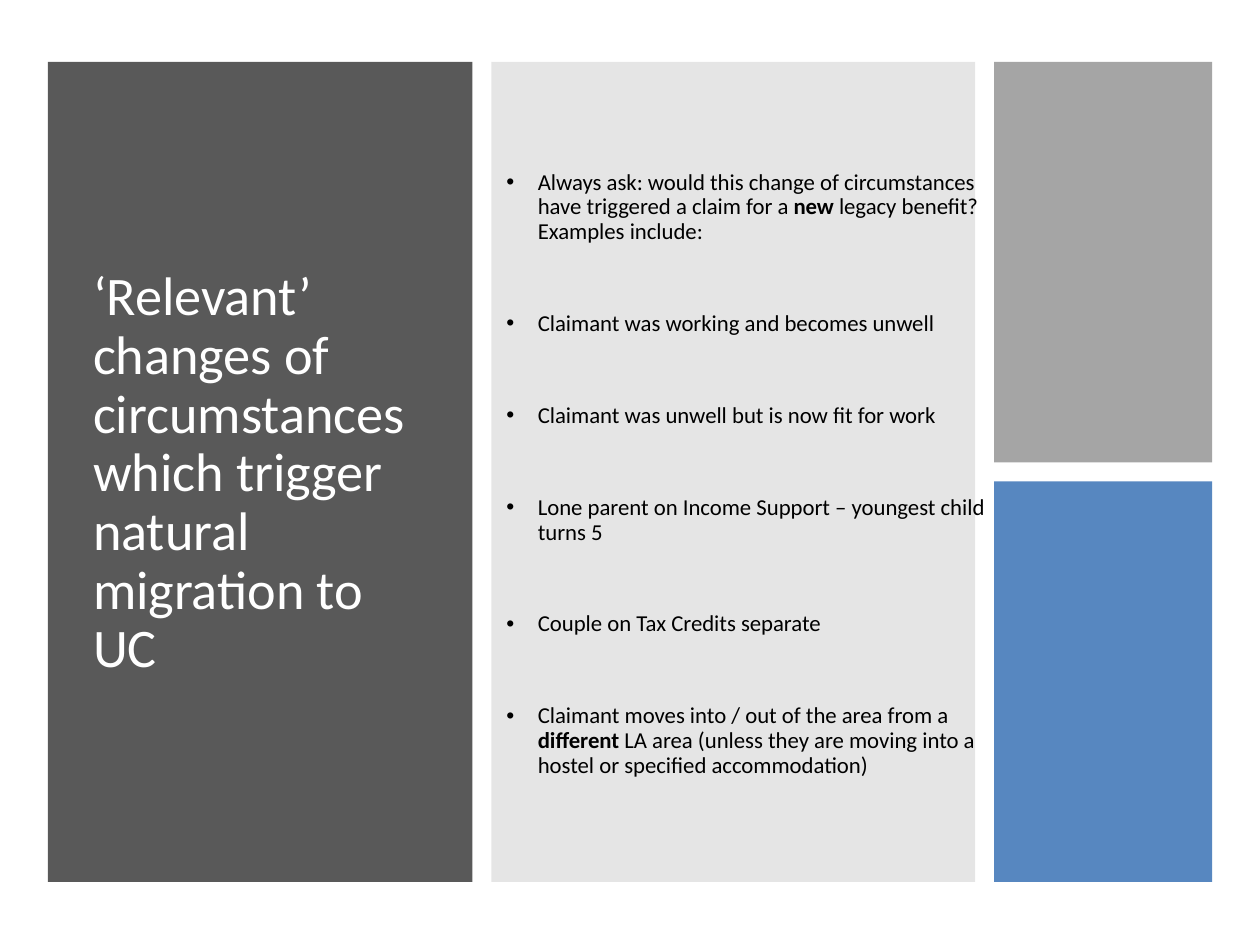
from lxml import etree
from pptx import Presentation
from pptx.dml.color import RGBColor
from pptx.enum.shapes import MSO_SHAPE
from pptx.enum.text import MSO_ANCHOR
from pptx.oxml.ns import qn
from pptx.util import Inches, Pt

RECTANGLE = MSO_SHAPE.RECTANGLE
MIDDLE = MSO_ANCHOR.MIDDLE
COLUMNS, ROWS = 100, 75

TITLE = "‘Relevant’ changes of circumstances which trigger natural migration to UC"
CHANGES = [
    [("Always ask: would this change of circumstances have triggered a claim for a ", False),
     ("new", True), (" legacy benefit? Examples include:", False)],
    [("Claimant was working and becomes unwell", False)],
    [("Claimant was unwell but is now fit for work", False)],
    [("Lone parent on Income Support – youngest child turns 5", False)],
    [("Couple on Tax Credits separate", False)],
    [("Claimant moves into / out of the area from a ", False), ("different", True),
     (" LA area (unless they are moving into a hostel or specified accommodation)", False)],
]


def hex_color(value):
    return RGBColor.from_string(value)


def add_run(paragraph, text, size, color, bold=False, font="Calibri"):
    run = paragraph.add_run()
    run.text = text
    run.font.name = font
    run.font.size = Pt(size)
    run.font.bold = bold
    run.font.color.rgb = hex_color(color)


def add_bullet(paragraph, margin, hanging):
    properties = paragraph._p.get_or_add_pPr()
    properties.set("marL", str(Inches(margin)))
    properties.set("indent", str(-Inches(hanging)))
    etree.SubElement(properties, qn("a:buFont")).set("typeface", "Arial")
    etree.SubElement(properties, qn("a:buChar")).set("char", "•")


class PanelSlide:
    """Draws panels and text on one slide, placed in grid columns and rows."""

    def __init__(self, deck):
        self.slide = deck.slides.add_slide(deck.slide_layouts[6])
        self.column = deck.slide_width / COLUMNS
        self.row = deck.slide_height / ROWS

    def place(self, left, top, width, height):
        return (round(left * self.column), round(top * self.row),
                round(width * self.column), round(height * self.row))

    def panel(self, area, color, opacity=100):
        panel = self.slide.shapes.add_shape(RECTANGLE, *self.place(*area))
        panel.shadow.inherit = False
        panel.line.fill.background()
        panel.fill.solid()
        panel.fill.fore_color.rgb = hex_color(color)
        if opacity < 100:
            tint = panel.fill._xPr.find(".//" + qn("a:srgbClr"))
            etree.SubElement(tint, qn("a:alpha")).set("val", str(opacity * 1000))

    def text(self, area, paragraphs, size, color, gap=0, bulleted=False):
        frame = self.slide.shapes.add_textbox(*self.place(*area)).text_frame
        frame.word_wrap = True
        frame.vertical_anchor = MIDDLE
        for index, runs in enumerate(paragraphs):
            paragraph = frame.add_paragraph() if index else frame.paragraphs[0]
            paragraph.line_spacing = 0.9
            paragraph.space_before = Pt(gap if index else 0)
            if bulleted:
                add_bullet(paragraph, margin=0.5, hanging=0.25)
            for words, bold in runs:
                add_run(paragraph, words, size, color, bold=bold)


def main():
    deck = Presentation()
    deck.slide_width, deck.slide_height = Inches(10), Inches(7.5)
    page = PanelSlide(deck)

    left, top, height, gap = 3.8, 4.9, 65.1, 1.5
    title_width, list_width, accent_width = 33.7, 38.4, 17.3
    list_left = left + title_width + gap
    accent_left = list_left + list_width + gap
    accent_height = (height - gap) / 2

    page.panel((left, top, title_width, height), "595959")
    page.text((6.4, 8.3, 28.8, 58.7), [[(TITLE, False)]], 31, "FFFFFF")
    page.panel((list_left, top, list_width, height), "808080", opacity=20)
    page.text((36.7, 8.3, 43.5, 58.7), CHANGES, 13, "000000", gap=38.5, bulleted=True)
    for index, (color, opacity) in enumerate([("A5A5A5", 100), ("4F81BD", 95)]):
        accent_top = top + index * (accent_height + gap)
        page.panel((accent_left, accent_top, accent_width, accent_height), color, opacity)

    deck.save("out.pptx")


if __name__ == "__main__":
    main()
